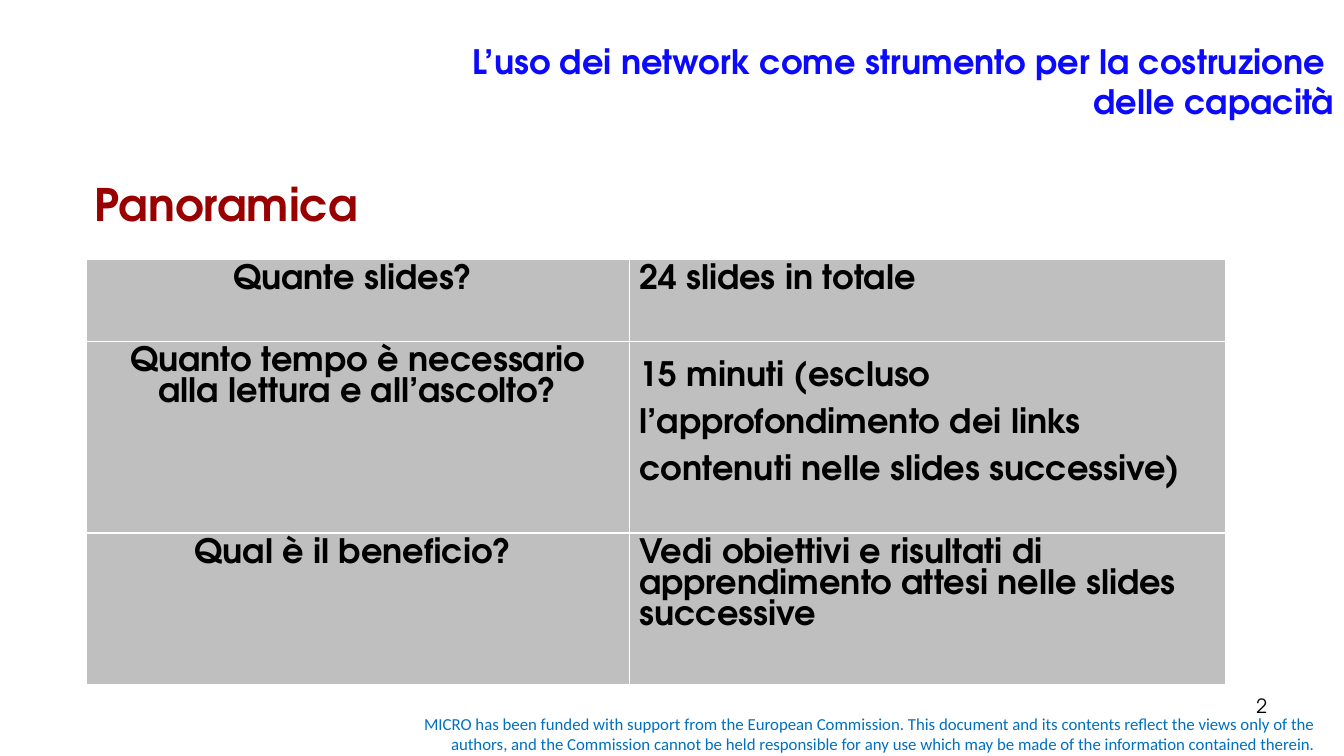
from lxml import etree
from pptx import Presentation
from pptx.dml.color import RGBColor
from pptx.enum.text import MSO_ANCHOR, PP_ALIGN
from pptx.oxml.ns import qn
from pptx.util import Pt

LEFT, CENTER, RIGHT = PP_ALIGN.LEFT, PP_ALIGN.CENTER, PP_ALIGN.RIGHT
TOP, MIDDLE = MSO_ANCHOR.TOP, MSO_ANCHOR.MIDDLE
COLORS = {"title": "0B0AFD", "heading": "990000", "text": "000000",
          "footer": "0070C0", "cell": "BFBFBF", "border": "FFFFFF"}
BODY_FONT, FOOTER_FONT = "TeX Gyre Adventor", "Calibri"
SINGLE, LOOSE = None, 1.5


def write(frame, text, size=24, color="text", font=BODY_FONT, bold=True,
          align=LEFT, spacing=SINGLE):
    frame.word_wrap = True
    paragraph = frame.paragraphs[0]
    paragraph.text = text
    paragraph.alignment = align
    paragraph.line_spacing = spacing
    for run in paragraph.runs:
        run.font.size = Pt(size)
        run.font.name = font
        run.font.bold = bold
        run.font.color.rgb = RGBColor.from_string(COLORS[color])


class SlideBuilder:
    def __init__(self, slide):
        self.slide = slide

    def text(self, box, text, anchor=TOP, **style):
        frame = self.slide.shapes.add_textbox(*map(Pt, box)).text_frame
        frame.vertical_anchor = anchor
        write(frame, text, **style)

    def border(self, cell, side):
        line = etree.SubElement(cell._tc.get_or_add_tcPr(), qn(f"a:ln{side}"),
                                w=str(Pt(1)))
        fill = etree.SubElement(line, qn("a:solidFill"))
        etree.SubElement(fill, qn("a:srgbClr"), val=COLORS["border"])

    def table(self, left, top, widths, heights, rows):
        table = self.slide.shapes.add_table(
            len(rows), len(widths), Pt(left), Pt(top),
            Pt(sum(widths)), Pt(sum(heights))).table
        for column, width in zip(table.columns, widths):
            column.width = Pt(width)
        for r, (height, answers) in enumerate(zip(heights, rows)):
            table.rows[r].height = Pt(height)
            for c, (text, spacing) in enumerate(answers):
                cell = table.cell(r, c)
                write(cell.text_frame, text, spacing=spacing,
                      align=LEFT if c else CENTER)
                # Borders come before the fill in the cell properties
                for side in "LRTB":
                    self.border(cell, side)
                cell.fill.solid()
                cell.fill.fore_color.rgb = RGBColor.from_string(COLORS["cell"])


def main():
    deck = Presentation()
    deck.slide_width, deck.slide_height = Pt(960), Pt(540)
    overview = SlideBuilder(deck.slides.add_slide(deck.slide_layouts[6]))

    # Funding notice
    overview.text(
        (270, 506.2, 676.8, 36),
        "MICRO has been funded with support from the European Commission. "
        "This document and its contents reflect the views only of the authors, "
        "and the Commission cannot be held responsible for any use which may be "
        "made of the information contained therein.",
        anchor=MIDDLE, size=12, color="footer", font=FOOTER_FONT, bold=False,
        align=RIGHT)

    # Questions and answers
    overview.table(61.5, 185.5, (388, 426), (58.3, 137, 108), [
        [("Quante slides? ", SINGLE), ("24 slides in totale", SINGLE)],
        [("Quanto tempo è necessario alla lettura e all’ascolto?", SINGLE),
         ("15 minuti (escluso l’approfondimento dei links contenuti nelle "
          "slides successive)", LOOSE)],
        [("Qual è il beneficio? ", SINGLE),
         ("Vedi obiettivi e risultati di apprendimento attesi nelle slides "
          "successive", SINGLE)],
    ])

    # Page number, heading and title
    overview.text((688.3, 491.8, 224, 37.4), "2", size=14, bold=False, align=RIGHT)
    overview.text((60.5, 122.6, 209, 46), "Panoramica", size=32, color="heading")
    overview.text((96, 13, 864, 90),
                  "L’uso dei network come strumento per la costruzione \v"
                  "delle capacità",
                  anchor=MIDDLE, color="title", align=RIGHT)

    deck.save("out.pptx")


if __name__ == "__main__":
    main()
